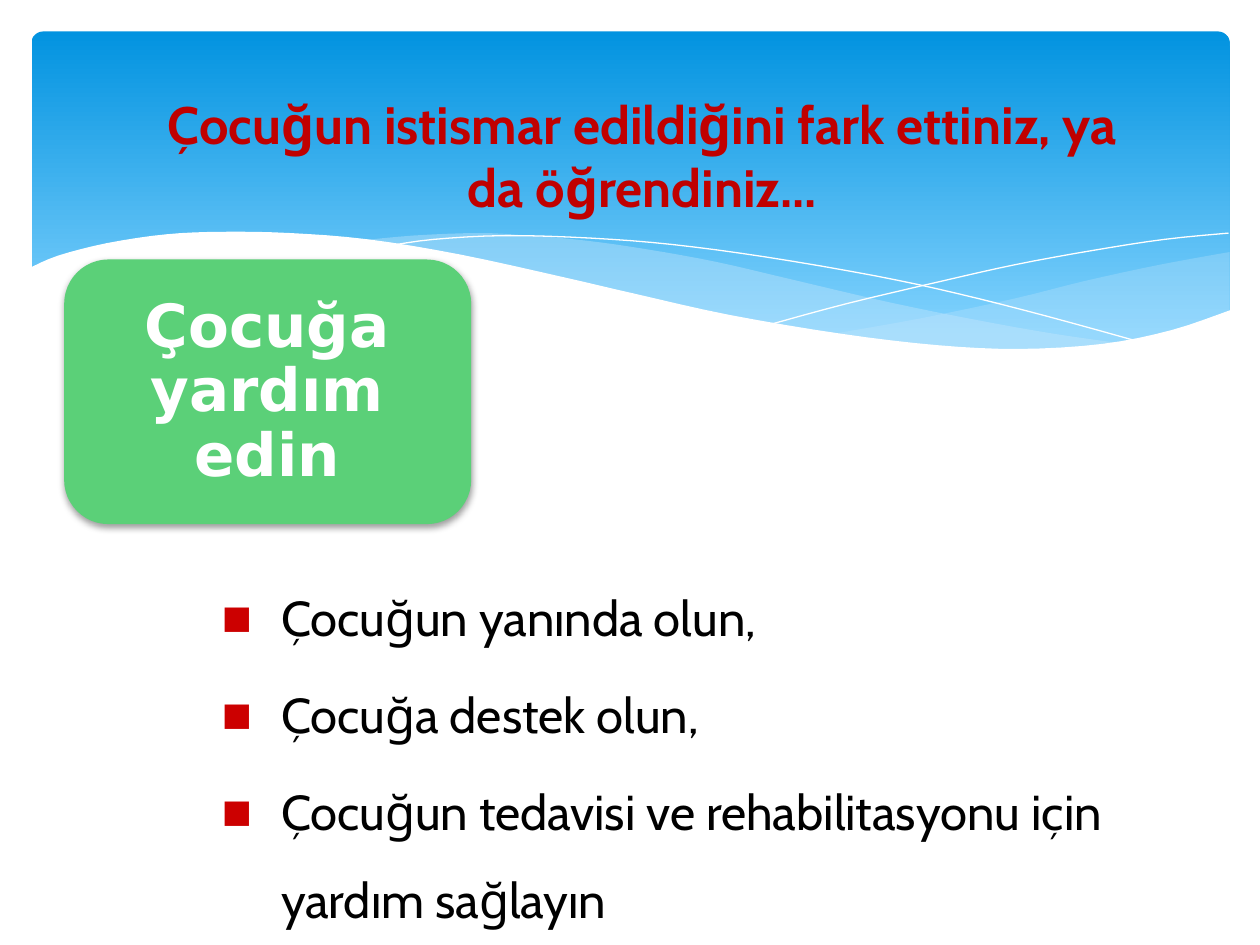
import pptx
import pptx.util
import pptx.dml.color
import pptx.enum.shapes
import pptx.enum.text
import pptx.oxml
import pptx.oxml.ns
from pptx.util import Inches

ROUND = pptx.enum.shapes.MSO_SHAPE.ROUNDED_RECTANGLE
ALIGN = pptx.enum.text.PP_ALIGN
MIDDLE = pptx.enum.text.MSO_ANCHOR.MIDDLE
FIT = pptx.enum.text.MSO_AUTO_SIZE
NS = pptx.oxml.ns.nsdecls("a")

CREST = [(9.77, 2.46), (9.3, 2.62), (8.75, 2.73), (8.09, 2.77), (7.44, 2.74),
         (6.68, 2.65), (5.79, 2.5), (5.03, 2.33), (4.47, 2.2), (3.65, 2.02),
         (2.92, 1.9), (2.3, 1.85), (1.77, 1.84), (1.32, 1.86), (0.85, 1.93),
         (0.46, 2.03), (0.23, 2.13)]
RIGHT = [[(9.76, 2), (9.21, 2.1), (8.61, 2.23), (8.05, 2.37), (7.29, 2.53), (6.61, 2.65)],
         [(6.61, 2.65), (7.05, 2.71), (7.57, 2.76), (8.14, 2.78), (8.63, 2.75),
          (9.13, 2.67), (9.49, 2.57), (9.76, 2.47)]]
LEFT = [[(8.93, 2.73), (8.37, 2.65), (7.75, 2.54), (7.06, 2.4), (6.29, 2.22),
         (5.69, 2.08), (5.14, 1.98), (4.65, 1.91), (4.2, 1.87), (3.8, 1.85),
         (3.28, 1.87), (2.86, 1.91)],
        [(2.86, 1.91), (3.42, 1.99), (4.04, 2.11), (4.49, 2.22), (5.3, 2.4),
         (6.01, 2.55), (6.65, 2.66), (7.22, 2.74), (7.73, 2.77), (8.28, 2.78),
         (8.93, 2.73)]]
FALL = [(3.09, 1.95), (3.44, 1.9), (4.01, 1.87), (4.69, 1.89), (5.33, 1.94),
        (6.08, 2.04), (6.95, 2.19), (7.6, 2.33), (8.31, 2.51), (9.07, 2.72)]
RISE = [(6.13, 2.57), (6.72, 2.41), (7.48, 2.23), (8.06, 2.1), (8.66, 1.99),
        (9.24, 1.9), (9.75, 1.85)]


def hue(code):
    """Turn a hex string into a colour."""
    return pptx.dml.color.RGBColor.from_string(code)


def smooth(knots, steps=4):
    """Return points on a Catmull-Rom curve through the knots."""
    ends = [knots[0], *knots, knots[-1]]
    points = []
    for a, b, c, d in zip(ends, ends[1:], ends[2:], ends[3:]):
        for step in range(steps):
            t = step / steps
            points.append(tuple(
                (2 * q + (r - p) * t + (2 * p - 5 * q + 4 * r - s) * t ** 2
                 + (3 * q - p - 3 * r + s) * t ** 3) / 2
                for p, q, r, s in zip(a, b, c, d)))
    return points + [knots[-1]]


class Deck:
    """Hold the style and the current slide."""

    face = "Cabin"

    def __init__(self):
        """Open a slide with a title and a body."""
        self.file = pptx.Presentation()
        self.file.slide_width, self.file.slide_height = Inches(10), Inches(7.5)
        self.slide = self.file.slides.add_slide(self.file.slide_layouts[1])
        self.shapes = self.slide.shapes

    def place(self, shape, box):
        """Move a placeholder to a box, in front of the rest."""
        shape.left, shape.top, shape.width, shape.height = map(Inches, box)
        self.shapes.element.append(shape.element)

    def style(self, para, size, color, bold=False, face=None):
        """Set the font of a paragraph."""
        font = para.font
        font.name, font.size, font.bold = face or self.face, pptx.util.Pt(size), bold
        font.color.rgb = hue(color)

    def round(self, box, turn):
        """Add a plain rounded box."""
        shape = self.shapes.add_shape(ROUND, *map(Inches, box))
        shape.adjustments[0] = turn
        shape.shadow.inherit = False
        shape.line.fill.background()
        return shape

    def banner(self, box, stops):
        """Add a rounded box with a downward gradient."""
        fill = self.round(box, 0.034).fill
        fill.gradient()
        fill.gradient_angle = 270
        for stop, (spot, color) in zip(fill.gradient_stops, stops):
            stop.position, stop.color.rgb = spot, hue(color)

    def card(self, box, color):
        """Add a rounded box with a soft shadow."""
        shape = self.round(box, 0.167)
        shape.fill.solid()
        shape.fill.fore_color.rgb = hue(color)
        glow = shape.element.spPr.find(pptx.oxml.ns.qn("a:effectLst"))
        glow.append(pptx.oxml.parse_xml(
            f'<a:outerShdw {NS} blurRad="50800" dist="25400" dir="5400000" rotWithShape="0">'
            '<a:srgbClr val="000000"><a:alpha val="38000"/></a:srgbClr></a:outerShdw>'))

    def trace(self, points, close):
        """Add an outline through the points."""
        spots = [(Inches(x), Inches(y)) for x, y in points]
        form = self.shapes.build_freeform(*spots[0])
        form.add_line_segments(spots[1:], close=close)
        shape = form.convert_to_shape()
        shape.shadow.inherit = False
        return shape

    def wave(self, points, color, alpha=100):
        """Add a filled wave."""
        shape = self.trace(points, True)
        shape.line.fill.background()
        shape.fill.solid()
        shape.fill.fore_color.rgb = hue(color)
        if alpha < 100:
            tint = next(shape.element.spPr.iter(pptx.oxml.ns.qn("a:srgbClr")))
            tint.append(pptx.oxml.parse_xml(f'<a:alpha {NS} val="{alpha * 1000}"/>'))

    def hair(self, knots, color):
        """Add a hairline curve."""
        shape = self.trace(smooth(knots), False)
        shape.fill.background()
        shape.line.color.rgb = hue(color)
        shape.line.width = 0

    def title(self, text, box):
        """Fill the title."""
        shape = self.shapes.title
        self.place(shape, box)
        frame = shape.text_frame
        frame.text, frame.auto_size, frame.vertical_anchor = text, FIT.NONE, MIDDLE
        para = frame.paragraphs[0]
        para.alignment = ALIGN.CENTER
        self.style(para, 30, "C00000", True)

    def label(self, text, box):
        """Add bold white text in the middle of a box."""
        frame = self.shapes.add_textbox(*map(Inches, box)).text_frame
        frame.text, frame.word_wrap, frame.vertical_anchor = text, True, MIDDLE
        frame.margin_left = frame.margin_right = Inches(0.14)
        frame.margin_top = frame.margin_bottom = Inches(0.14)
        para = frame.paragraphs[0]
        para.alignment, para.line_spacing = ALIGN.CENTER, 0.9
        self.style(para, 34, "FFFFFF", True, "DejaVu Sans")

    def body(self, items, box):
        """Fill the body with square bullets."""
        shape = self.slide.placeholders[1]
        self.place(shape, box)
        frame = shape.text_frame
        frame.text, frame.auto_size = "\n".join(items), FIT.SHAPE_TO_FIT_TEXT
        for para in frame.paragraphs:
            para.level, para.line_spacing = 1, 1.5
            para.space_before = pptx.util.Pt(5)
            props = para._p.get_or_add_pPr()
            props.set("marL", str(Inches(0.99)))
            props.set("indent", str(Inches(-0.47)))
            for mark in ('buClr {}><a:srgbClr val="CC0000"/></a:buClr>',
                         'buSzPct {} val="65000"/>',
                         'buFont {} typeface="Cabin"/>', 'buChar {} char="■"/>'):
                props.append(pptx.oxml.parse_xml("<a:" + mark.format(NS)))
            self.style(para, 28, "000000")


def main():
    """Build and save the slide."""
    deck = Deck()
    deck.banner((0.25, 0.25, 9.51, 2.7), [(0, "0293E0"), (0.9, "83D3FE")])
    for curves, alpha in ((RIGHT, 29), (LEFT, 40)):
        deck.wave([spot for knots in curves for spot in smooth(knots)], "C6E7FC", alpha)
    for knots in (FALL, RISE):
        deck.hair(knots, "FFFFFF")
    deck.wave(smooth(CREST) + [(0.23, 3.29), (9.77, 3.29)], "FFFFFF")
    deck.title("Çocuğun istismar edildiğini fark ettiniz, ya da öğrendiniz...",
               (0.98, 0.68, 8.24, 1.1))
    deck.card((0.51, 2.06, 3.23, 2.1), "5BD078")
    deck.label("Çocuğa yardım edin", (0.61, 2.17, 3.02, 1.89))
    deck.body(["Çocuğun yanında olun,", "Çocuğa destek olun,",
               "Çocuğun tedavisi ve rehabilitasyonu için yardım sağlayın"],
              (1.14, 4.38, 8.66, 3.07))
    deck.file.save("out.pptx")


if __name__ == "__main__":
    main()
